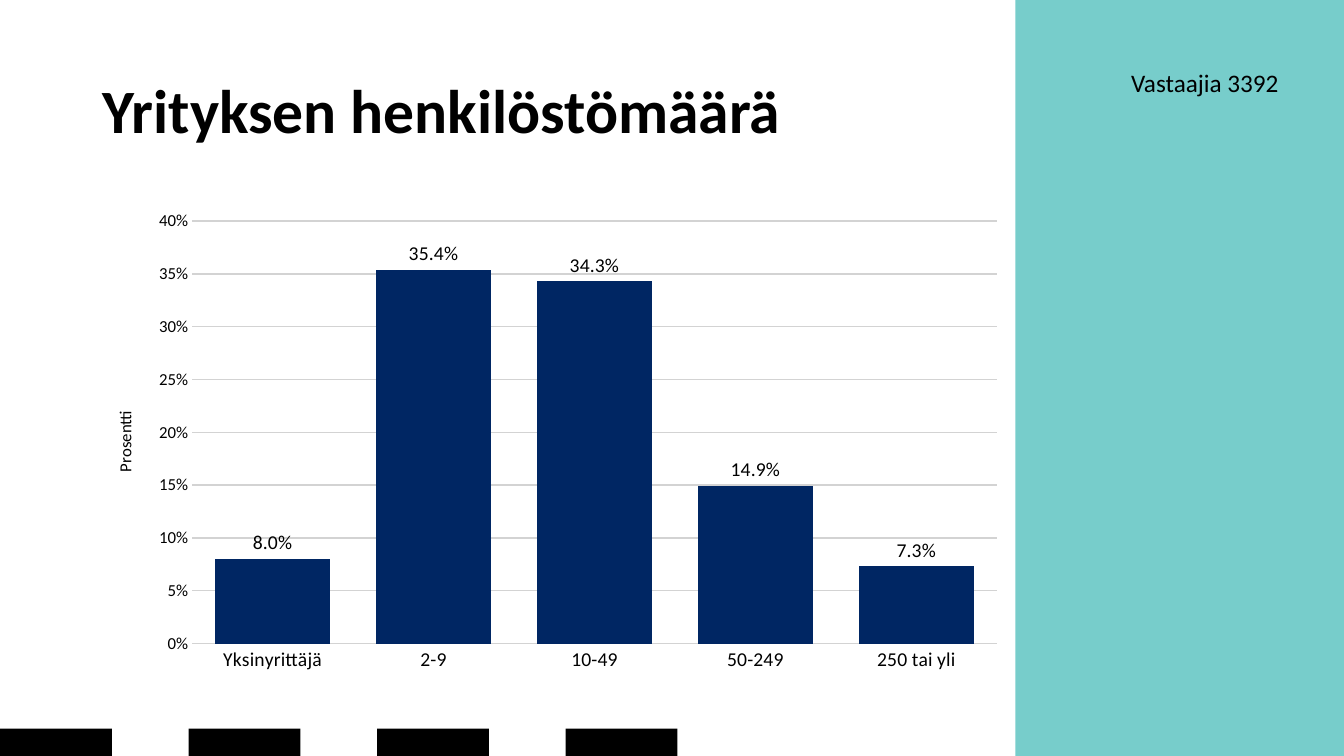
from pptx import Presentation
from pptx import util as u
from pptx.chart.data import CategoryChartData
from pptx.dml.color import RGBColor
from pptx.enum import chart as charts, shapes, text

TEAL = RGBColor(0x77, 0xCD, 0xCB)
NAVY = RGBColor(0x00, 0x26, 0x63)
BLACK = RGBColor(0, 0, 0)
WHITE = RGBColor(0xFF, 0xFF, 0xFF)
GRID_GRAY = RGBColor(0xD3, 0xD3, 0xD3)


class SlideBuilder:
    font_name = "Calibri"

    def __init__(self, presentation):
        self.slide = presentation.slides.add_slide(presentation.slide_layouts[5])
        self.slide.background.fill.solid()
        self.slide.background.fill.fore_color.rgb = WHITE

    def style_font(self, font, size, bold=False):
        font.name = self.font_name
        font.size = u.Pt(size)
        font.bold = bold
        font.color.rgb = BLACK

    def add_text(self, paragraph, content, size, alignment, bold=False):
        paragraph.alignment = alignment
        run = paragraph.add_run()
        run.text = content
        self.style_font(run.font, size, bold)

    def rectangle(self, left, top, width, height, color):
        shape = self.slide.shapes.add_shape(
            shapes.MSO_SHAPE.RECTANGLE, *map(u.Inches, (left, top, width, height)))
        shape.shadow.inherit = False
        shape.fill.solid()
        shape.fill.fore_color.rgb = color
        shape.line.fill.background()

    def title(self, content, left, top, width, height):
        shape = self.slide.shapes.title
        shape.left, shape.top, shape.width, shape.height = map(
            u.Inches, (left, top, width, height))
        frame = shape.text_frame
        frame.auto_size = text.MSO_AUTO_SIZE.NONE
        frame.vertical_anchor = text.MSO_ANCHOR.MIDDLE
        paragraph = frame.paragraphs[0]
        paragraph.line_spacing = 0.9
        self.add_text(paragraph, content, 44, text.PP_ALIGN.LEFT, bold=True)

    def text_box(self, content, left, top, width, height):
        shape = self.slide.shapes.add_textbox(*map(u.Inches, (left, top, width, height)))
        frame = shape.text_frame
        frame.word_wrap = True
        frame.auto_size = text.MSO_AUTO_SIZE.SHAPE_TO_FIT_TEXT
        self.add_text(frame.paragraphs[0], content, 18, text.PP_ALIGN.RIGHT)

    def column_chart(self, shares, value_title, left, top, width, height):
        data = CategoryChartData(number_format="0.0%")
        data.categories = list(shares)
        data.add_series("Series 1", list(shares.values()))
        chart = self.slide.shapes.add_chart(
            charts.XL_CHART_TYPE.COLUMN_CLUSTERED,
            *map(u.Inches, (left, top, width, height)), data).chart
        chart.has_title = False
        chart.has_legend = False
        self.style_font(chart.font, 11)

        plot = chart.plots[0]
        plot.gap_width = 40
        plot.vary_by_categories = False
        series = plot.series[0]
        series.format.fill.solid()
        series.format.fill.fore_color.rgb = NAVY

        labels = series.data_labels
        labels.show_value = True
        labels.position = charts.XL_LABEL_POSITION.OUTSIDE_END
        labels.number_format = "0.0%"
        labels.number_format_is_linked = False
        self.style_font(labels.font, 14)

        for axis, size in ((chart.category_axis, 14), (chart.value_axis, 12)):
            axis.major_tick_mark = charts.XL_TICK_MARK.INSIDE
            axis.format.line.fill.background()
            self.style_font(axis.tick_labels.font, size)

        value_axis = chart.value_axis
        value_axis.minimum_scale = 0
        value_axis.maximum_scale = 0.4
        value_axis.major_unit = 0.05
        value_axis.tick_labels.number_format = "0%"
        value_axis.tick_labels.number_format_is_linked = False
        value_axis.has_major_gridlines = True
        grid_line = value_axis.major_gridlines.format.line
        grid_line.color.rgb = GRID_GRAY
        grid_line.width = u.Pt(1)
        paragraph = value_axis.axis_title.text_frame.paragraphs[0]
        self.add_text(paragraph, value_title, 12, text.PP_ALIGN.CENTER)


def main():
    presentation = Presentation()
    presentation.slide_width = u.Inches(13.33)
    presentation.slide_height = u.Inches(7.5)

    builder = SlideBuilder(presentation)
    builder.rectangle(10.07, 0, 3.26, 7.5, TEAL)
    for index in range(4):
        builder.rectangle(index * 1.87, 7.23, 1.11, 0.27, BLACK)
    builder.title("Yrityksen henkilöstömäärä", 0.92, 0.4, 11.5, 1.45)
    builder.text_box("Vastaajia 3392", 10.71, 0.62, 2.07, 0.4)
    shares = {
        "Yksinyrittäjä": 0.08,
        "2-9": 0.354,
        "10-49": 0.343,
        "50-249": 0.149,
        "250 tai yli": 0.073,
    }
    builder.column_chart(shares, "Prosentti", 0.92, 2, 9.15, 4.76)
    presentation.save("out.pptx")


if __name__ == "__main__":
    main()
